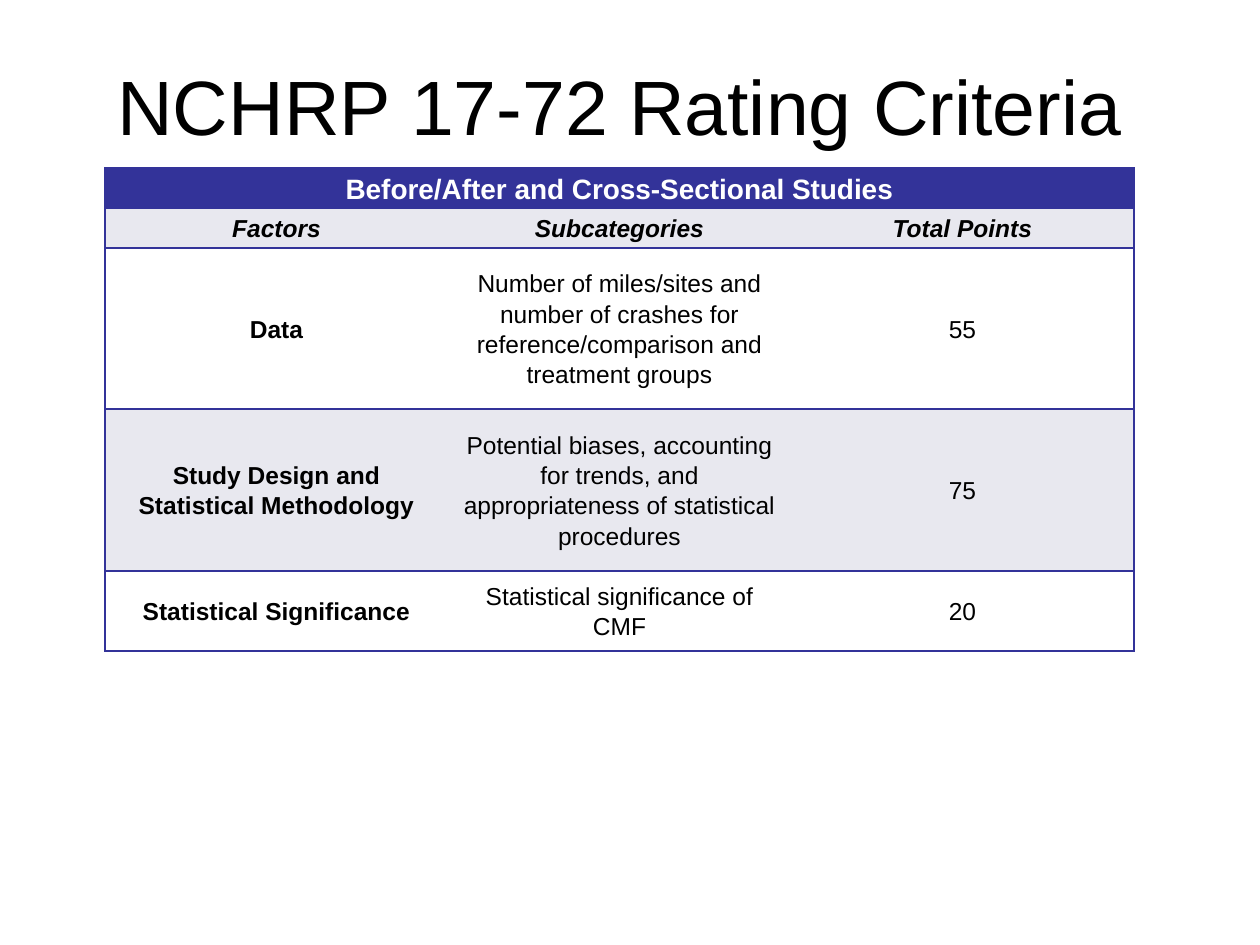
from pptx import Presentation
from pptx.dml.color import RGBColor as RGB
from pptx.enum.text import MSO_ANCHOR as Anchor, PP_ALIGN as Align
from pptx.oxml.ns import qn
from pptx.util import Pt
from lxml.etree import SubElement as Sub

PX = 914400 // 126
FONT = "Arial"
COLORS = {"navy": "333399", "band": "E8E8EF", "white": "FFFFFF", "black": "000000"}
HEAD = "Before/After and Cross-Sectional Studies"
ROWS = [
    ("Factors", "Subcategories", "Total Points"),
    ("Data", "Number of miles/sites and number of crashes for "
     "reference/comparison and treatment groups", "55"),
    ("Study Design and Statistical Methodology", "Potential biases, accounting for "
     "trends, and appropriateness of statistical procedures", "75"),
    ("Statistical Significance", "Statistical significance of CMF", "20"),
]
HEIGHTS = [40, 40, 161, 162, 80]
WIDTH = 343


def px(n):
    return n * PX


def color(name):
    return RGB.from_string(COLORS[name])


def style(para, size, hue, bold=False, slant=False):
    para.alignment = Align.CENTER
    for run in para.runs:
        font = run.font
        font.name, font.size = FONT, Pt(size)
        font.bold, font.italic = bold, slant
        font.color.rgb = color(hue)


def add_title(slide, text):
    box = slide.shapes.add_textbox(px(32), px(42), px(1176), px(126))
    frame = box.text_frame
    frame.word_wrap = True
    frame.vertical_anchor = Anchor.MIDDLE
    frame.text = text
    style(frame.paragraphs[0], 44, "black")


def set_edges(cell, sides):
    props = cell._tc.get_or_add_tcPr()
    for side in "LRTB":
        line = Sub(props, qn(f"a:ln{side}"), w=str(Pt(1)))
        if side in sides:
            fill = Sub(line, qn("a:solidFill"))
            Sub(fill, qn("a:srgbClr"), val=COLORS["navy"])
        else:
            Sub(line, qn("a:noFill"))


def set_cell(cell, text, fill, sides, **look):
    set_edges(cell, sides)
    cell.fill.solid()
    cell.fill.fore_color.rgb = color(fill)
    cell.vertical_anchor = Anchor.MIDDLE
    cell.margin_left = cell.margin_right = px(10)
    cell.margin_top = cell.margin_bottom = 0
    cell.text_frame.text = text
    para = cell.text_frame.paragraphs[0]
    para.line_spacing = 1.1
    para.space_after = Pt(6)
    style(para, **look)


def add_grid(slide):
    frame = slide.shapes.add_table(len(HEIGHTS), 3, px(105), px(168),
                                   px(3 * WIDTH), px(sum(HEIGHTS)))
    table = frame.table
    for col in table.columns:
        col.width = px(WIDTH)
    for row, high in zip(table.rows, HEIGHTS):
        row.height = px(high)

    table.cell(0, 0).merge(table.cell(0, 2))
    for c, text in enumerate((HEAD, "", "")):
        set_cell(table.cell(0, c), text, "navy", "LRTB",
                 size=16, hue="white", bold=True)
    for r, texts in enumerate(ROWS, 1):
        fill = "band" if r % 2 else "white"
        for c, text in enumerate(texts):
            sides = ("LTB", "TB", "RTB")[c]
            set_cell(table.cell(r, c), text, fill, sides, size=14, hue="black",
                     bold=r == 1 or c == 0, slant=r == 1)


def main():
    deck = Presentation()
    deck.slide_width, deck.slide_height = px(1260), px(945)
    slide = deck.slides.add_slide(deck.slide_layouts[6])
    add_title(slide, "NCHRP 17-72 Rating Criteria")
    add_grid(slide)
    deck.save("out.pptx")


if __name__ == "__main__":
    main()
